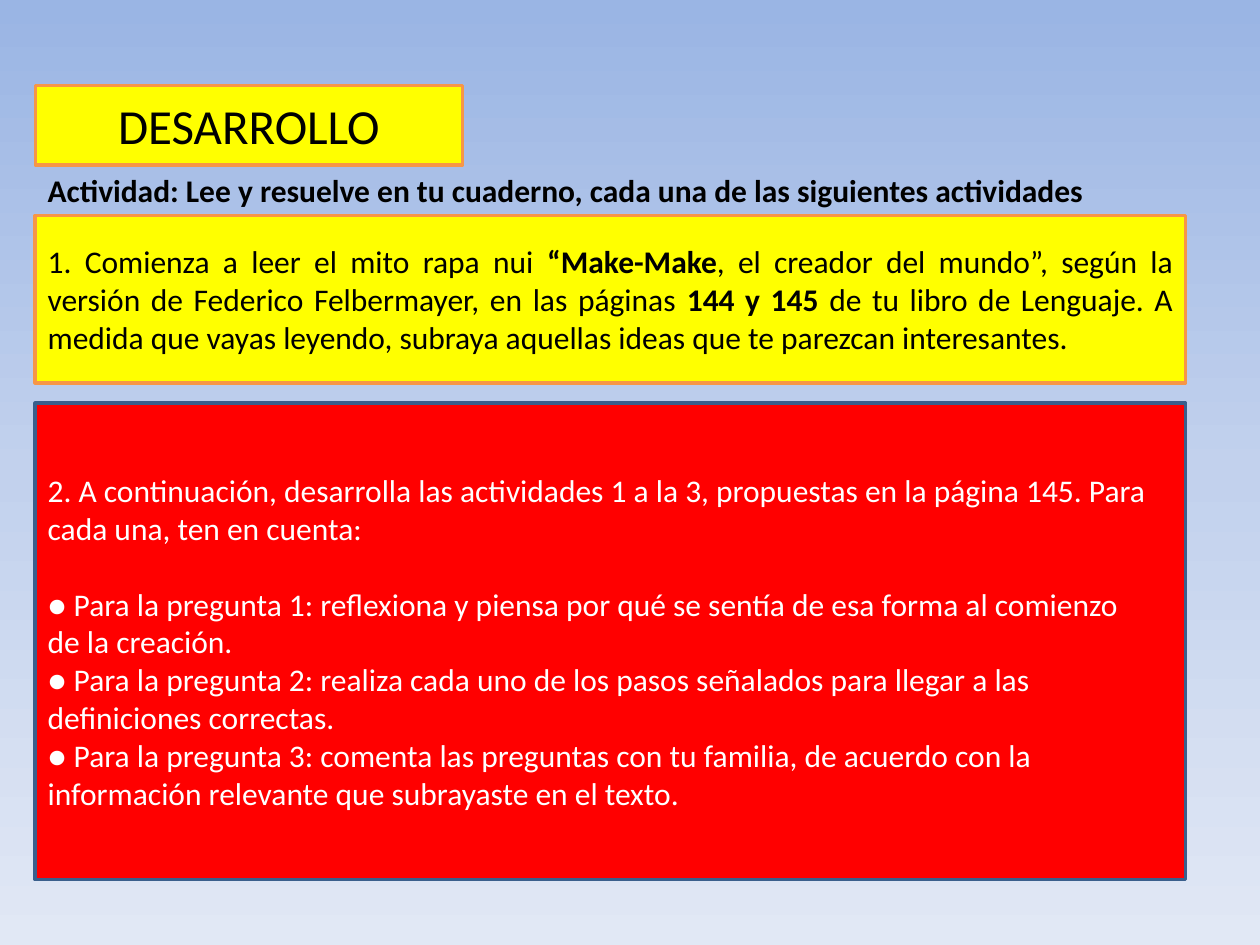
from copy import deepcopy

from pptx import Presentation
from pptx.dml.color import RGBColor
from pptx.enum import shapes, text
from pptx.util import Inches, Pt

FONT = "Calibri"
BODY_SIZE, TITLE_SIZE = 18, 28
LEFT, WIDTH, TITLE_WIDTH = 0.28, 9.13, 3.39
BLACK, WHITE, YELLOW, RED = "000000", "FFFFFF", "FFFF00", "FF0000"
ORANGE, NAVY = "F79646", "3A5F8C"
BACKGROUND = [(0, "9AB5E4"), (0.5, "C2D1ED"), (1, "E1E8F5")]
CENTER, JUSTIFY, START = (
    text.PP_ALIGN.CENTER, text.PP_ALIGN.JUSTIFY, text.PP_ALIGN.LEFT)

# Each paragraph is a list of (words, bold) runs.
HEADING = [[("Actividad: Lee y resuelve en tu cuaderno, cada una de las "
             "siguientes actividades", True)]]
TITLE = [[("DESARROLLO", False)]]
READING = [[
    ("1. Comienza a leer el mito rapa nui ", False),
    ("“Make-Make", True),
    (", el creador del mundo”, según la versión de Federico Felbermayer, "
     "en las páginas ", False),
    ("144 y 145 ", True),
    ("de tu libro de Lenguaje. A medida que vayas leyendo, subraya aquellas "
     "ideas que te parezcan interesantes.", False),
]]
QUESTIONS = [[(line, False)] for line in (
    "2. A continuación, desarrolla las actividades 1 a la 3, propuestas en la página 145. Para",
    "cada una, ten en cuenta:",
    "● Para la pregunta 1: reflexiona y piensa por qué se sentía de esa forma al comienzo",
    "de la creación.",
    "● Para la pregunta 2: realiza cada uno de los pasos señalados para llegar a las",
    "definiciones correctas.",
    "● Para la pregunta 3: comenta las preguntas con tu familia, de acuerdo con la",
    "información relevante que subrayaste en el texto.",
)]
INTRO_END = 1  # the paragraph that a one-line gap follows

# top, width, height, fill, line, paragraphs, size, colour, alignment
BOXES = [
    (0.68, TITLE_WIDTH, 0.63, YELLOW, ORANGE, TITLE, TITLE_SIZE, BLACK, CENTER),
    (1.71, WIDTH, 1.33, YELLOW, ORANGE, READING, BODY_SIZE, BLACK, JUSTIFY),
    (3.2, WIDTH, 3.78, RED, NAVY, QUESTIONS, BODY_SIZE, WHITE, JUSTIFY),
]


def rgb(value):
    return RGBColor.from_string(value)


def paint_background(slide):
    fill = slide.background.fill
    fill.gradient()
    fill.gradient_angle = 270
    first = fill.gradient_stops[0]._gs
    first.addnext(deepcopy(first))
    for stop, (position, color) in zip(fill.gradient_stops, BACKGROUND):
        stop.position = position
        stop.color.rgb = rgb(color)


def write(frame, paragraphs, size, color, alignment):
    frame.word_wrap = True
    for index, runs in enumerate(paragraphs):
        paragraph = frame.add_paragraph() if index else frame.paragraphs[0]
        paragraph.alignment = alignment
        for words, bold in runs:
            run = paragraph.add_run()
            run.text = words
            run.font.name, run.font.size, run.font.bold = FONT, Pt(size), bold
            run.font.color.rgb = rgb(color)


def add_box(slide, top, width, height, fill, line, *content):
    box = slide.shapes.add_shape(
        shapes.MSO_SHAPE.RECTANGLE,
        *map(Inches, (LEFT, top, width, height)))
    box.shadow.inherit = False
    box.fill.solid()
    box.fill.fore_color.rgb = rgb(fill)
    box.line.color.rgb = rgb(line)
    box.line.width = Pt(2)
    box.text_frame.vertical_anchor = text.MSO_ANCHOR.MIDDLE
    write(box.text_frame, *content)
    return box


def main():
    presentation = Presentation()
    presentation.slide_width, presentation.slide_height = Inches(10), Inches(7.5)
    slide = presentation.slides.add_slide(presentation.slide_layouts[6])
    paint_background(slide)

    heading = slide.shapes.add_textbox(*map(Inches, (LEFT, 1.31, WIDTH, 0.4)))
    write(heading.text_frame, HEADING, BODY_SIZE, BLACK, START)
    heading.text_frame.auto_size = text.MSO_AUTO_SIZE.SHAPE_TO_FIT_TEXT

    title, reading, questions = [add_box(slide, *box) for box in BOXES]
    intro = questions.text_frame.paragraphs[INTRO_END]
    intro.space_after = Pt(BODY_SIZE * 1.2)

    presentation.save("out.pptx")


if __name__ == "__main__":
    main()
